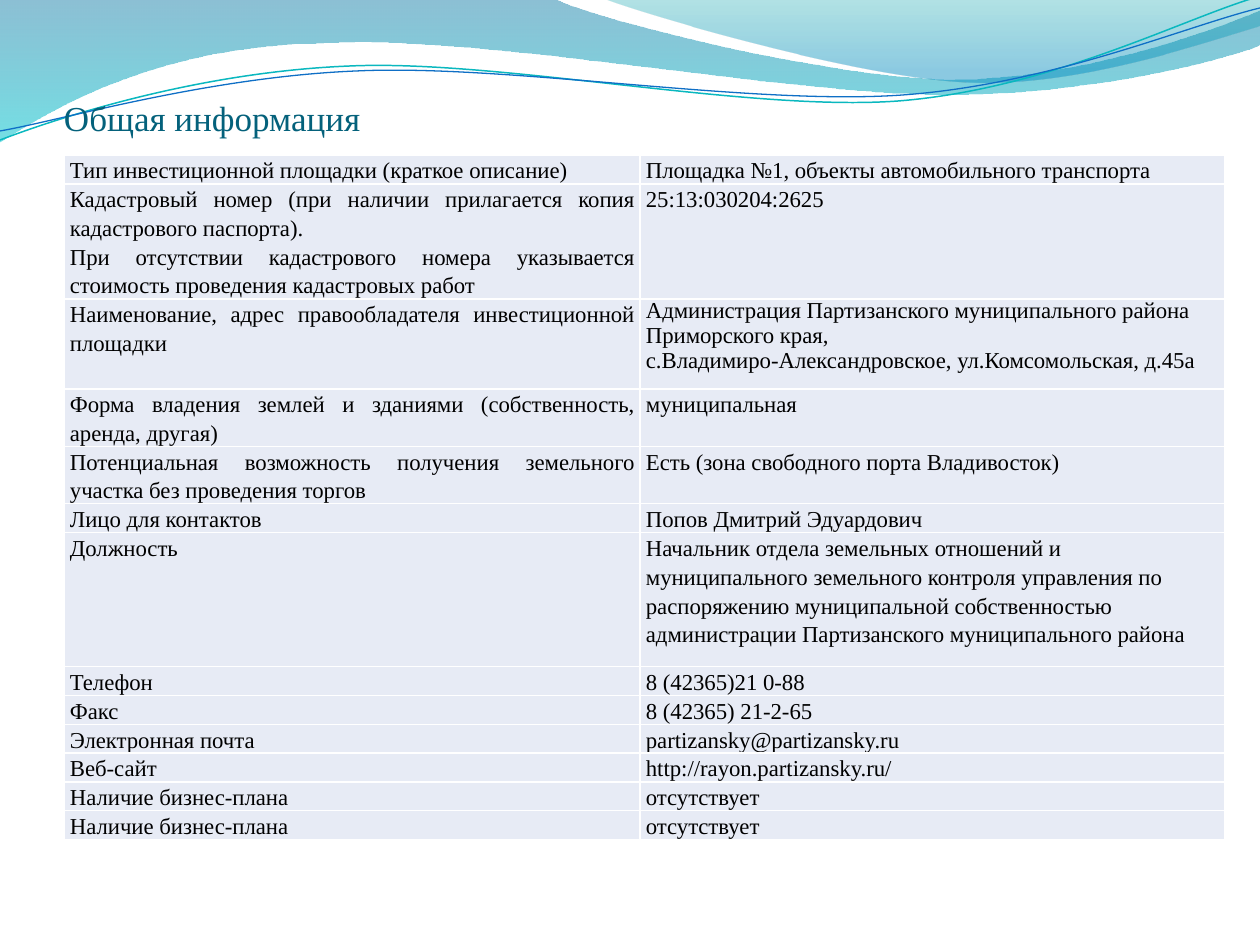
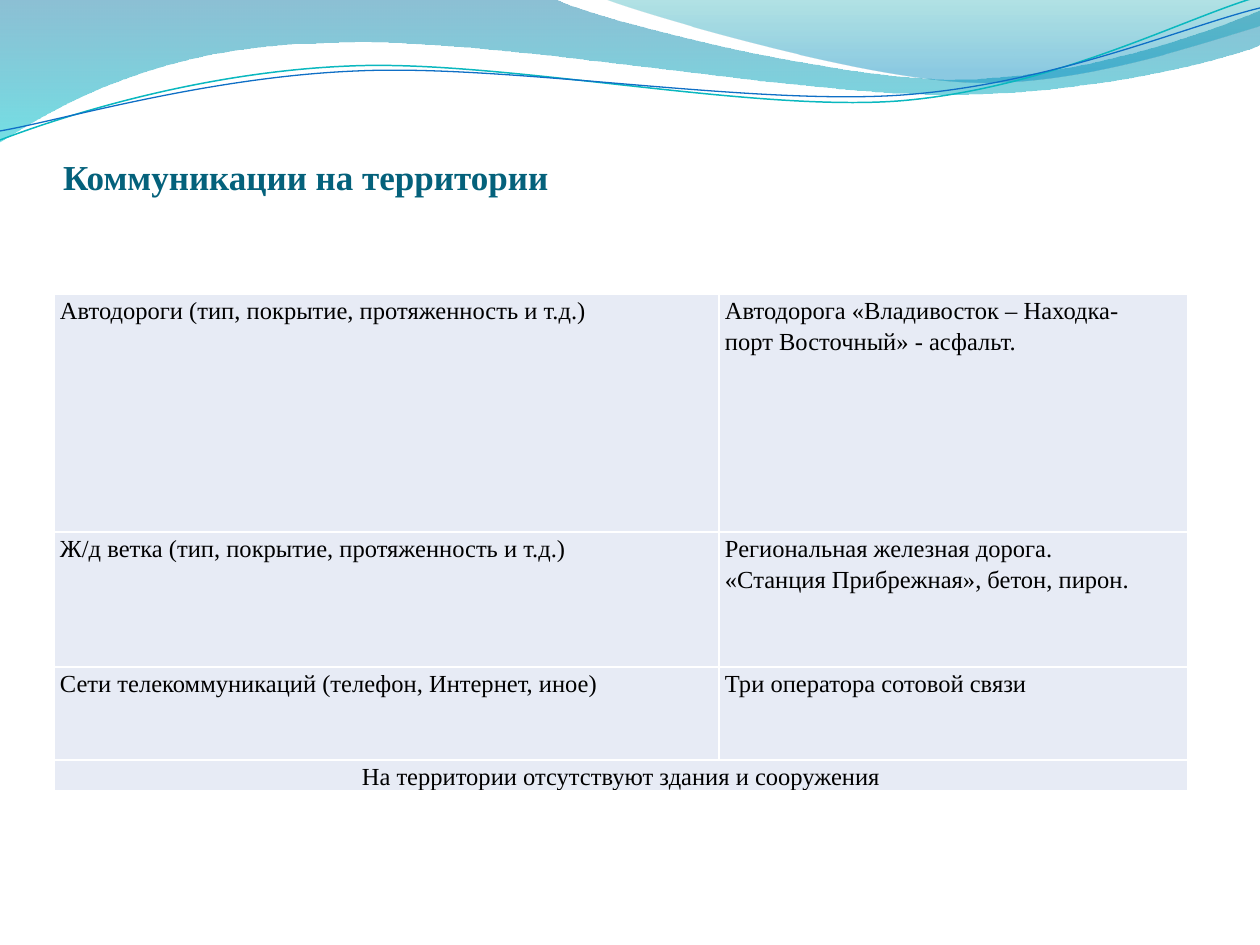
"""Build two slides on an investment site: general facts and transport links."""
from dataclasses import dataclass
from itertools import chain

from lxml.etree import SubElement
from pptx import Presentation
from pptx.dml.color import RGBColor
from pptx.enum.text import MSO_ANCHOR, PP_ALIGN
from pptx.oxml.ns import qn
from pptx.util import Emu, Pt


@dataclass(frozen=True)
class Theme:
    font: str = "Times New Roman"
    title: str = "04617B"
    text: str = "000000"
    cell: str = "E7EBF5"
    rule: str = "FFFFFF"
    head: int = 20
    facts: int = 13
    links: int = 14


THEME = Theme()
SCALE = 914400 / 126


def px(count):
    return Emu(round(count * SCALE))


def put(frame, text, size=13, color=THEME.text, bold=False, align=PP_ALIGN.JUSTIFY, gap=1.15):
    frame.word_wrap = True
    for spot, line in enumerate(text.split("\n")):
        para = frame.paragraphs[0] if spot == 0 else frame.add_paragraph()
        para.alignment = align
        para.line_spacing = gap
        run = para.add_run()
        run.text = line
        run.font.name = THEME.font
        run.font.size = Pt(size)
        run.font.bold = bold
        run.font.color.rgb = RGBColor.from_string(color)


deck = Presentation()
deck.slide_width, deck.slide_height = px(1260), px(945)
plain = deck.slide_layouts[5]

waves = [
    {"start": (0, 0),
     "steps": [[(554, -1)],
               [(600, 21), (837, 79), (955, 79)],
               [(1075, 79), (1207, 33), (1260, 11)],
               [(1261, 45)],
               [(1239, 55), (1096, 96), (940, 94)],
               [(784, 94), (481, 35), (324, 43)],
               [(163, 45), (58, 105), (-1, 142)],
               [(0, 0)]],
     "stops": [(0, "0074A1", 45), (1, "00C6CF", 55)]},
    {"start": (604, -1),
     "steps": [[(641, 14), (859, 78), (969, 82)],
               [(1079, 87), (1211, 40), (1260, 26)],
               [(1260, 0)],
               [(604, -1)]],
     "stops": [(0, "00A1A9", 30), (0.8, "008BBF", 45)]},
    {"start": (0, 140),
     "steps": [[(60, 117), (199, 72), (349, 66)],
               [(498, 59), (747, 112), (898, 101)],
               [(1050, 89), (1182, 19), (1257, -3)]],
     "line": ("0AB8BF", 0.85)},
    {"start": (0, 131),
     "steps": [[(59, 121), (207, 77), (357, 71)],
               [(508, 64), (752, 106), (903, 95)],
               [(1053, 84), (1186, 26), (1260, 8)]],
     "line": ("0F6FC6", 0.75)},
]

pages = [
    {"title": "Общая информация", "bold": False, "box": (64, 26, 1134, 119),
     "place": (64, 155), "size": THEME.facts, "wide": (576, 585),
     "high": [28, 115, 90, 57, 57, 29, 134] + [28] * 6,
     "rows": [
         ("Тип инвестиционной площадки (краткое описание)",
          "Площадка №1, объекты автомобильного транспорта"),
         ("Кадастровый номер (при наличии прилагается копия кадастрового паспорта).\n"
          "При отсутствии кадастрового номера указывается стоимость проведения кадастровых работ",
          "25:13:030204:2625"),
         ("Наименование, адрес правообладателя инвестиционной площадки",
          "Администрация Партизанского муниципального района Приморского края,\n"
          "с.Владимиро-Александровское, ул.Комсомольская, д.45а"),
         ("Форма владения землей и зданиями (собственность, аренда, другая)", "муниципальная"),
         ("Потенциальная возможность получения земельного участка без проведения торгов",
          "Есть (зона свободного порта Владивосток)"),
         ("Лицо для контактов", "Попов Дмитрий Эдуардович"),
         ("Должность",
          "Начальник отдела земельных отношений и муниципального земельного контроля "
          "управления по распоряжению муниципальной собственностью администрации "
          "Партизанского муниципального района"),
         ("Телефон", "8 (42365)21 0-88"),
         ("Факс", "8 (42365) 21-2-65"),
         ("Электронная почта", "partizansky@partizansky.ru"),
         ("Веб-сайт", "http://rayon.partizansky.ru/"),
         ("Наличие бизнес-плана", "отсутствует"),
         ("Наличие бизнес-плана", "отсутствует")],
     "forms": {(2, 1): {"align": PP_ALIGN.LEFT, "gap": 1.0},
               (6, 1): {"align": PP_ALIGN.LEFT}}},
    {"title": "Коммуникации на территории", "bold": True, "box": (63, 97, 1134, 107),
     "place": (54, 294), "size": THEME.links, "wide": (665, 469),
     "high": [238, 135, 93, 31],
     "rows": [
         ("Автодороги (тип, покрытие, протяженность и т.д.)",
          "Автодорога «Владивосток – Находка-\nпорт Восточный» - асфальт."),
         ("Ж/д ветка (тип, покрытие, протяженность и т.д.)",
          "Региональная железная дорога.\n«Станция Прибрежная», бетон, пирон."),
         ("Сети телекоммуникаций (телефон, Интернет, иное)",
          "Три оператора сотовой связи"),
         ("На территории отсутствуют здания и сооружения", "")],
     "forms": {(3, 0): {"align": PP_ALIGN.CENTER}}},
]

slides = [deck.slides.add_slide(plain) for page in pages]

for mark, wave in enumerate(waves, 20):
    pen = slides[0].shapes.build_freeform(*wave["start"], scale=SCALE)
    pen.add_line_segments(list(chain.from_iterable(wave["steps"])), close=False)
    shape = pen.convert_to_shape()
    shape.shadow.inherit = False
    legs = shape.element.iter(qn("a:lnTo"))
    legs = iter(list(legs))
    for step in wave["steps"]:
        parts = [next(legs) for point in step]
        if len(parts) == 3:
            curve = parts[0].makeelement(qn("a:cubicBezTo"))
            parts[0].addprevious(curve)
            for part in parts:
                curve.append(part[0])
                part.getparent().remove(part)
    if "stops" in wave:
        shape.fill.gradient()
        shape.fill.gradient_angle = 270
        for stop, (spot, color, share) in zip(shape.fill.gradient_stops, wave["stops"]):
            stop.position = spot
            stop.color.rgb = RGBColor.from_string(color)
        for tint, (spot, color, share) in zip(shape.element.iter(qn("a:srgbClr")), wave["stops"]):
            SubElement(tint, qn("a:alpha"), val=str(share * 1000))
        shape.line.fill.background()
    else:
        color, width = wave["line"]
        shape.fill.background()
        shape.line.color.rgb = RGBColor.from_string(color)
        shape.line.width = Pt(width)
    next(shape.element.iter(qn("p:cNvPr"))).set("id", str(mark))
    plain.shapes.element.append(shape.element)

for slide, page in zip(slides, pages):
    title = slide.shapes.title
    title.left, title.top, title.width, title.height = map(px, page["box"])
    frame = title.text_frame
    frame.vertical_anchor = MSO_ANCHOR.BOTTOM
    frame.margin_left = frame.margin_right = frame.margin_top = 0
    frame.margin_bottom = px(6)
    put(frame, page["title"], size=THEME.head, color=THEME.title, bold=page["bold"],
        align=PP_ALIGN.LEFT, gap=1.0)

    rows, wide, high = page["rows"], page["wide"], page["high"]
    sides = map(px, (*page["place"], sum(wide), sum(high)))
    table = slide.shapes.add_table(len(rows), len(wide), *sides).table
    table.first_row = table.horz_banding = False
    for col, width in zip(table.columns, wide):
        col.width = px(width)
    for row, height in zip(table.rows, high):
        row.height = px(height)
    for down, texts in enumerate(rows):
        for over, text in enumerate(texts):
            cell = table.cell(down, over)
            cell.margin_left = cell.margin_right = px(6)
            cell.margin_top = cell.margin_bottom = 0
            props = cell._tc.get_or_add_tcPr()
            for edge in ("a:lnL", "a:lnR", "a:lnT", "a:lnB"):
                line = SubElement(props, qn(edge), w=str(Pt(1)))
                SubElement(SubElement(line, qn("a:solidFill")), qn("a:srgbClr"), val=THEME.rule)
            cell.fill.solid()
            cell.fill.fore_color.rgb = RGBColor.from_string(THEME.cell)
            put(cell.text_frame, text, size=page["size"], **page["forms"].get((down, over), {}))
        if not texts[1]:
            table.cell(down, 0).merge(table.cell(down, 1))

deck.save("out.pptx")
